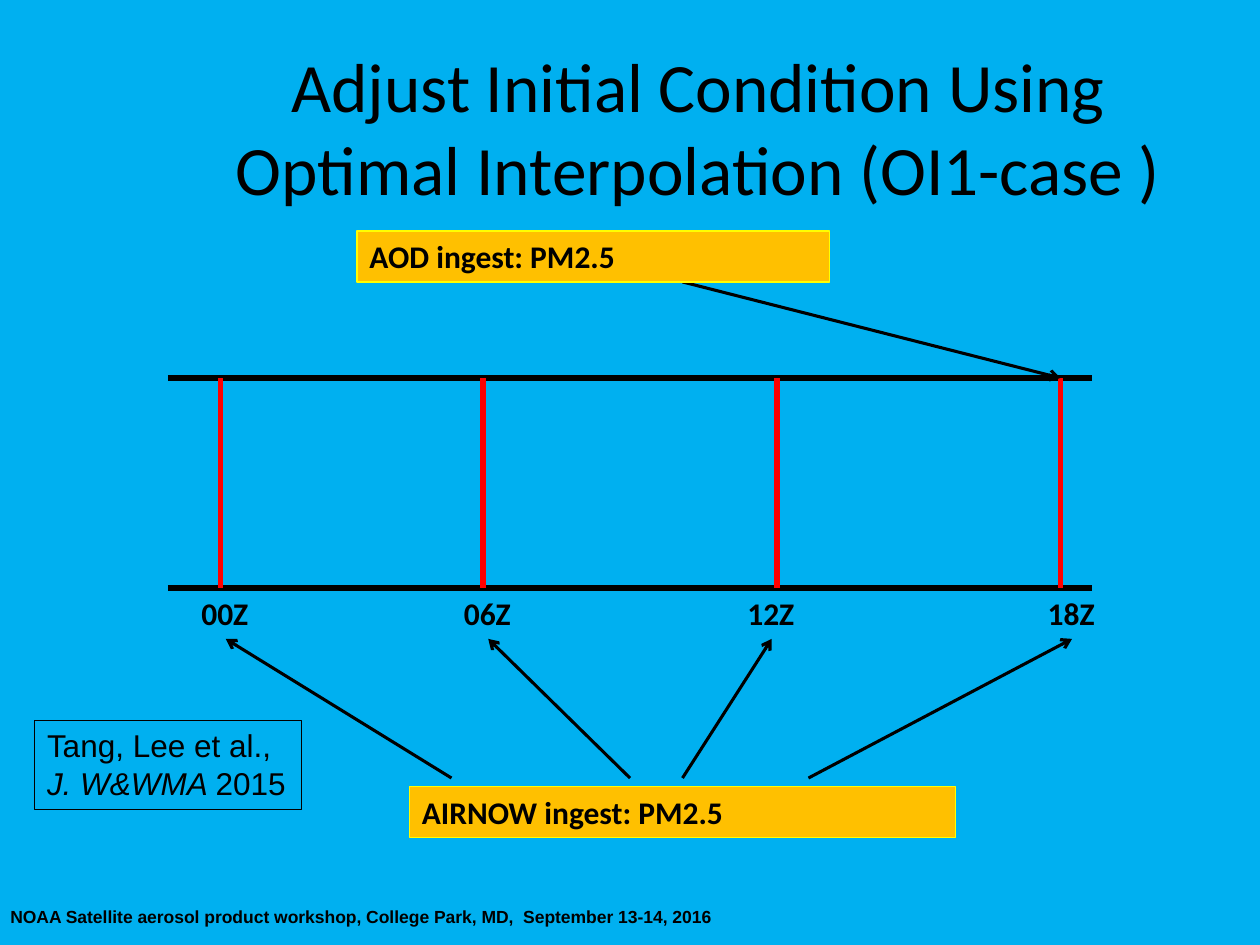
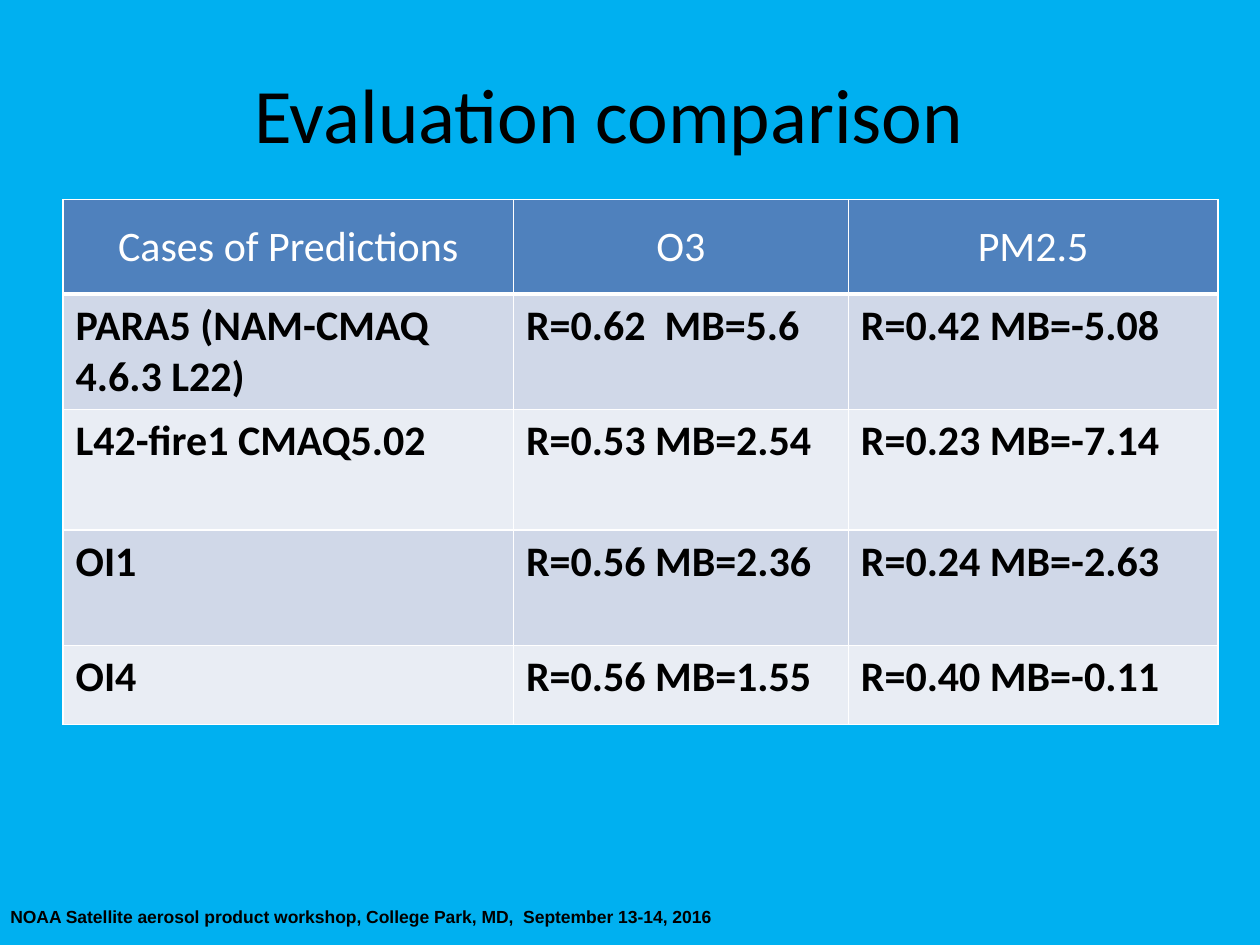
from dataclasses import dataclass

import pptx
import pptx.dml.color
import pptx.enum.shapes
import pptx.enum.text
import pptx.oxml
import pptx.oxml.ns
import pptx.util
from lxml import etree

ANCHOR = pptx.enum.text.MSO_ANCHOR
ALIGN = pptx.enum.text.PP_ALIGN
FIT = pptx.enum.text.MSO_AUTO_SIZE
COLUMNS, ROWS = 120, 90  # the slide's grid


@dataclass(frozen=True)
class Theme:
    sky: str = "00B0F0"
    ink: str = "000000"
    paper: str = "FFFFFF"
    amber: str = "FFC000"
    yellow: str = "FFFF00"
    red: str = "FF0000"
    header: str = "4F81BD"
    bands: tuple = ("D0D8E8", "E9EDF4")
    heading: str = "Calibri"
    plain: str = "Arial"
    title_size: float = 44
    long_title_size: float = 39.6
    table_size: float = 24
    label_size: float = 18
    footer_size: float = 10


@dataclass(frozen=True)
class Box:
    """A region of the slide, in grid columns and rows."""
    left: float
    top: float
    width: float
    height: float

    def within(self, left, top, width, height):
        return Box(self.left + left, self.top + top, width, height)

    def point(self, column, row):
        return self.left + column, self.top + row

    def lengths(self):
        return (across(self.left), down(self.top),
                across(self.width), down(self.height))


THEME = Theme()
SLIDE_WIDTH, SLIDE_HEIGHT = pptx.util.Inches(10), pptx.util.Inches(7.5)


def across(columns):
    return round(SLIDE_WIDTH * columns / COLUMNS)


def down(rows):
    return round(SLIDE_HEIGHT * rows / ROWS)


def rgb(color):
    return pptx.dml.color.RGBColor.from_string(color)


def paint(fill, color):
    fill.solid()
    fill.fore_color.rgb = rgb(color)


def add_span(para, text, size, font=THEME.heading, color=THEME.ink,
             bold=False, italic=False):
    span = para.add_run()
    span.text = text
    span.font.name = font
    span.font.size = pptx.util.Pt(size)
    span.font.color.rgb = rgb(color)
    span.font.bold = bold
    span.font.italic = italic


def add_text(slide, box, text, size, font=THEME.heading, wrap=True):
    """Bold one-line text in a box that grows with it."""
    shape = slide.shapes.add_textbox(*box.lengths())
    frame = shape.text_frame
    frame.word_wrap = wrap
    frame.auto_size = FIT.SHAPE_TO_FIT_TEXT
    add_span(frame.paragraphs[0], text, size, font, bold=True)
    return shape


def add_panel(slide, box, line, width, fill=None, wrap=True):
    """Outlined rectangle; returns its first paragraph's frame."""
    shape = slide.shapes.add_shape(
        pptx.enum.shapes.MSO_SHAPE.RECTANGLE, *box.lengths())
    shape.shadow.inherit = False
    if fill:
        paint(shape.fill, fill)
    else:
        shape.fill.background()
    shape.line.color.rgb = rgb(line)
    shape.line.width = pptx.util.Pt(width)
    frame = shape.text_frame
    frame.word_wrap = wrap
    frame.auto_size = FIT.SHAPE_TO_FIT_TEXT
    frame.vertical_anchor = ANCHOR.TOP
    frame.paragraphs[0].alignment = ALIGN.LEFT
    return frame


def add_ingest(slide, box, text):
    frame = add_panel(slide, box, THEME.yellow, 0.75, THEME.amber)
    add_span(frame.paragraphs[0], text, THEME.label_size, bold=True)


def add_line(slide, start, end, color=THEME.ink, width=3.0, arrow=False):
    connector = slide.shapes.add_connector(
        pptx.enum.shapes.MSO_CONNECTOR.STRAIGHT,
        across(start[0]), down(start[1]), across(end[0]), down(end[1]))
    connector.line.color.rgb = rgb(color)
    connector.line.width = pptx.util.Pt(width)
    if arrow:
        etree.SubElement(connector.get_or_add_ln(),
                         pptx.oxml.ns.qn("a:tailEnd"), type="arrow")
    etree.SubElement(connector.element.spPr, pptx.oxml.ns.qn("a:effectLst"))
    return connector


def add_arrow(slide, start, end):
    return add_line(slide, start, end, width=1.75, arrow=True)


def start_slide(deck, title, box, size):
    """Title-only slide with its heading and the shared footer."""
    slide = deck.slides.add_slide(deck.slide_layouts.get_by_name("Title Only"))
    heading = slide.shapes.title
    heading.left, heading.top, heading.width, heading.height = box.lengths()
    frame = heading.text_frame
    frame.word_wrap = True
    frame.auto_size = FIT.NONE
    frame.vertical_anchor = ANCHOR.MIDDLE
    frame.paragraphs[0].alignment = ALIGN.CENTER
    add_span(frame.paragraphs[0], title, size)
    add_text(slide, Box(-0.2, 85.7, 69.2, 3.2),
             "NOAA Satellite aerosol product workshop, College Park, MD,"
             "  September 13-14, 2016", THEME.footer_size, THEME.plain)
    return slide


def add_timeline(slide, box):
    """Rails with a red tick, a label and an incoming arrow per cycle."""
    for row in (0, box.height):
        add_line(slide, box.point(0, row), box.point(box.width, row))
    cycles = (("00Z", 5, 2, 27), ("06Z", 30, 27, 44),
              ("12Z", 58, 54, 49), ("18Z", 85, 82.6, 61))
    for name, tick, label_left, arrow_start in cycles:
        add_line(slide, box.point(tick, 0), box.point(tick, box.height),
                 THEME.red)
        label_box = box.within(label_left, box.height, 7, 4.85)
        label = add_text(slide, label_box, name, THEME.label_size, wrap=False)
        arrow = add_arrow(slide, box.point(arrow_start, 38.1),
                          label_box.point(3.5, 4.85))
        arrow.end_connect(label, 2)
    add_arrow(slide, box.point(49, -9.15), box.point(85, 0))


def add_citation(slide, box):
    frame = add_panel(slide, box, THEME.ink, 0.5, wrap=False)
    add_span(frame.paragraphs[0], "Tang, Lee et al.,", THEME.label_size,
             THEME.plain)
    para = frame.add_paragraph()
    para.alignment = ALIGN.LEFT
    add_span(para, "J. W&WMA ", THEME.label_size, THEME.plain, italic=True)
    add_span(para, "2015", THEME.label_size, THEME.plain)


def add_borders(cell, bottom):
    properties = cell._tc.get_or_add_tcPr()
    widths = (("L", 1), ("R", 1), ("T", 1), ("B", bottom))
    for place, (side, width) in enumerate(widths):
        edge = pptx.oxml.parse_xml(
            f'<a:ln{side} {pptx.oxml.ns.nsdecls("a")} '
            f'w="{pptx.util.Pt(width)}"><a:solidFill>'
            f'<a:srgbClr val="{THEME.paper}"/></a:solidFill></a:ln{side}>')
        properties.insert(place, edge)


def add_scores(slide, box, rows, column_shares, row_shares):
    table = slide.shapes.add_table(
        len(rows), len(column_shares), *box.lengths()).table
    for column, share in zip(table.columns, column_shares):
        column.width = across(box.width * share)
    for row, share in zip(table.rows, row_shares):
        row.height = down(box.height * share)
    for number, texts in enumerate(rows):
        is_header = number == 0
        for place, text in enumerate(texts):
            cell = table.cell(number, place)
            paint(cell.fill, THEME.header if is_header
                  else THEME.bands[(number - 1) % 2])
            add_borders(cell, 3 if is_header else 1)
            para = cell.text_frame.paragraphs[0]
            if is_header:
                cell.vertical_anchor = ANCHOR.MIDDLE
                para.alignment = ALIGN.CENTER
            add_span(para, text, THEME.table_size, bold=not is_header,
                     color=THEME.paper if is_header else THEME.ink)


def build_adjustment(deck):
    slide = start_slide(
        deck, "Adjust Initial Condition Using Optimal Interpolation (OI1-case )",
        Box(16, 4, 101, 16), THEME.long_title_size)
    add_ingest(slide, Box(39, 74.9, 52, 4.85), "AIRNOW ingest: PM2.5")
    add_timeline(slide, Box(16, 36, 88, 20))
    add_ingest(slide, Box(34, 22, 45, 4.85), "AOD ingest: PM2.5")
    add_citation(slide, Box(3.3, 68.6, 25.4, 8.5))


def build_evaluation(deck):
    slide = start_slide(deck, "Evaluation comparison", Box(0, 5, 116, 11.4),
                        THEME.title_size)
    rows = (
        ("Cases of Predictions", "O3", "PM2.5"),
        ("PARA5 (NAM-CMAQ 4.6.3 L22)", "R=0.62  MB=5.6", "R=0.42 MB=-5.08"),
        ("L42-fire1 CMAQ5.02", "R=0.53 MB=2.54", "R=0.23 MB=-7.14"),
        ("OI1", "R=0.56 MB=2.36", "R=0.24 MB=-2.63"),
        ("OI4", "R=0.56 MB=1.55", "R=0.40 MB=-0.11"),
    )
    add_scores(slide, Box(6, 19, 110, 50), rows,
               column_shares=(0.39, 0.29, 0.32),
               row_shares=(0.18, 0.22, 0.23, 0.22, 0.15))


def main():
    deck = pptx.Presentation()
    deck.slide_width, deck.slide_height = SLIDE_WIDTH, SLIDE_HEIGHT
    paint(deck.slide_master.background.fill, THEME.sky)
    build_adjustment(deck)
    build_evaluation(deck)
    deck.save("out.pptx")


if __name__ == "__main__":
    main()
